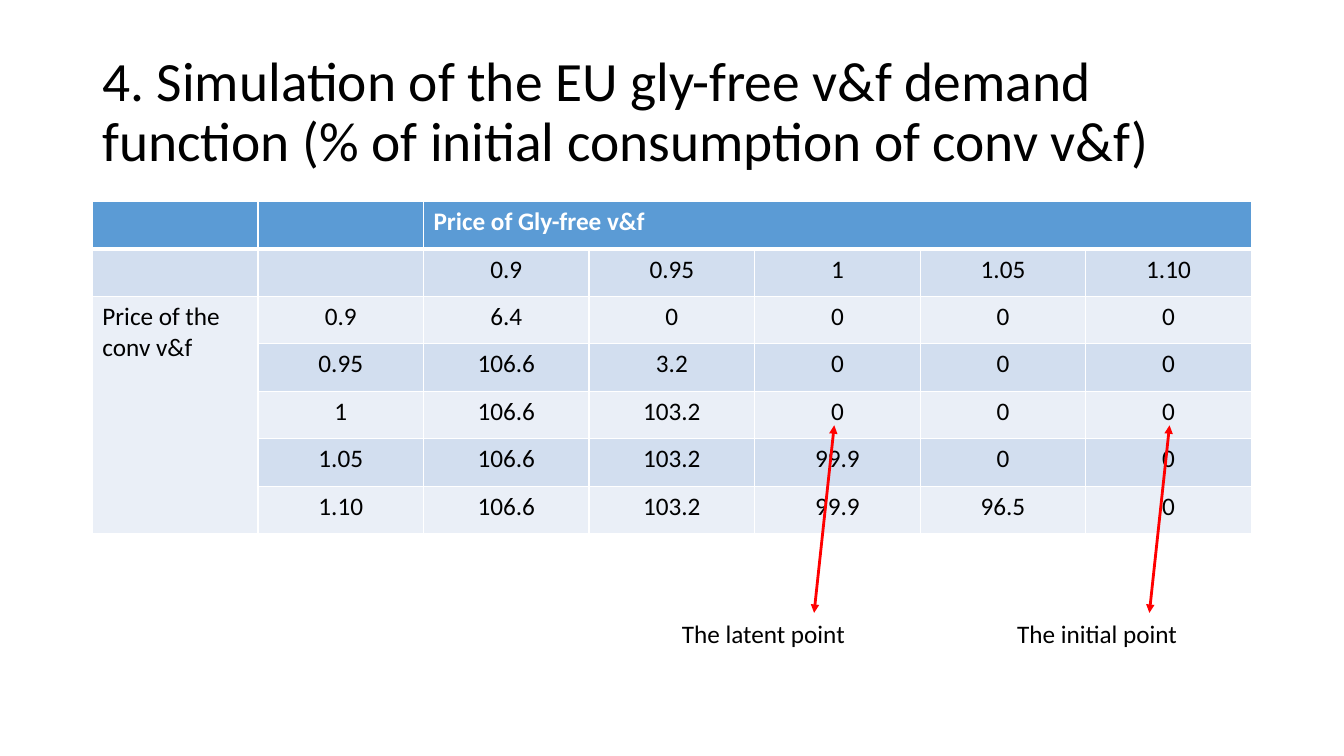
from lxml import etree
from pptx import Presentation
from pptx.dml.color import RGBColor
from pptx.enum import shapes, text
from pptx.oxml import parse_xml
from pptx.oxml.ns import nsdecls, qn
from pptx.util import Pt

BLACK = RGBColor(0x00, 0x00, 0x00)
WHITE = RGBColor(0xFF, 0xFF, 0xFF)
RED = RGBColor(0xFF, 0x00, 0x00)
HEADER_BLUE = RGBColor(0x5B, 0x9B, 0xD5)
BAND_DARK = RGBColor(0xD2, 0xDE, 0xEF)
BAND_LIGHT = RGBColor(0xEA, 0xEF, 0xF7)

FONT = "Calibri"
TITLE = ("4. Simulation of the EU gly-free v&f demand function "
         "(% of initial consumption of conv v&f)")
DEMAND = [
    ["", "", "Price of Gly-free v&f", "", "", "", ""],
    ["", "", "0.9", "0.95", "1", "1.05", "1.10"],
    ["Price of the conv v&f", "0.9", "6.4", "0", "0", "0", "0"],
    ["", "0.95", "106.6", "3.2", "0", "0", "0"],
    ["", "1", "106.6", "103.2", "0", "0", "0"],
    ["", "1.05", "106.6", "103.2", "99.9", "0", "0"],
    ["", "1.10", "106.6", "103.2", "99.9", "96.5", "0"],
]


def add_span(para, words, size, color=BLACK, bold=False):
    span = para.add_run()
    span.text = words
    span.font.name = FONT
    span.font.size = Pt(size)
    span.font.bold = bold
    span.font.color.rgb = color


def add_text(page, words, size, left, top, width, height):
    box = page.shapes.add_textbox(Pt(left), Pt(top), Pt(width), Pt(height))
    box.text_frame.word_wrap = True
    add_span(box.text_frame.paragraphs[0], words, size)
    return box


def add_title(page, left, top, width, height):
    box = add_text(page, TITLE, 39.6, left, top, width, height)
    box.text_frame.vertical_anchor = text.MSO_ANCHOR.MIDDLE
    box.text_frame.paragraphs[0].line_spacing = 0.9


def set_borders(cell, top, bottom):
    """Draw white cell edges; top and bottom are widths in points."""
    properties = cell._tc.get_or_add_tcPr()
    widths = {"lnL": 1, "lnR": 1, "lnT": top, "lnB": bottom}
    for position, (edge, width) in enumerate(widths.items()):
        properties.insert(position, parse_xml(
            f'<a:{edge} {nsdecls("a")} w="{Pt(width)}"><a:solidFill>'
            f'<a:srgbClr val="{WHITE}"/></a:solidFill></a:{edge}>'))


def add_demand_table(page, left, top, width, height):
    rows, columns = len(DEMAND), len(DEMAND[0])
    table = page.shapes.add_table(
        rows, columns, Pt(left), Pt(top), Pt(width), Pt(height)).table
    for column in table.columns:
        column.width = Pt(width / columns)
    for row in table.rows:
        row.height = Pt(height / rows)
    for r, values in enumerate(DEMAND):
        header = r == 0
        fill = HEADER_BLUE if header else BAND_DARK if r % 2 else BAND_LIGHT
        for c, value in enumerate(values):
            cell = table.cell(r, c)
            cell.fill.solid()
            cell.fill.fore_color.rgb = fill
            set_borders(cell, 3 if r == 1 else 1, 3 if header else 1)
            if value:
                para = cell.text_frame.paragraphs[0]
                if not header and c > 0:
                    para.alignment = text.PP_ALIGN.CENTER
                add_span(para, value, 18, WHITE if header else BLACK, header)
    table.cell(0, 2).merge(table.cell(0, columns - 1))
    table.cell(2, 0).merge(table.cell(rows - 1, 0))


def add_marked_point(page, words, left, top, width, height):
    """Label with a double-headed arrow rising from its top edge to a table cell."""
    add_text(page, words, 18, left, top, width, height)
    foot = left + 101.5
    arrow = page.shapes.add_connector(
        shapes.MSO_CONNECTOR.STRAIGHT,
        Pt(foot), Pt(top), Pt(foot + 14.4), Pt(top - 134))
    arrow.line.color.rgb = RED
    arrow.line.width = Pt(2)
    line = arrow.line._get_or_add_ln()
    for end in ("a:headEnd", "a:tailEnd"):
        etree.SubElement(line, qn(end), type="triangle")
    etree.SubElement(arrow._element.spPr, qn("a:effectLst"))


def main():
    deck = Presentation()
    deck.slide_width, deck.slide_height = Pt(960), Pt(540)
    page = deck.slides.add_slide(deck.slide_layouts[6])
    add_title(page, 66, 28.8, 828, 104.4)
    add_demand_table(page, 66, 144, 828, 237.3)
    for words, left in (("The latent point", 480), ("The initial point", 719.5)):
        add_marked_point(page, words, left, 437.8, 150, 29)
    deck.save("out.pptx")


if __name__ == "__main__":
    main()
